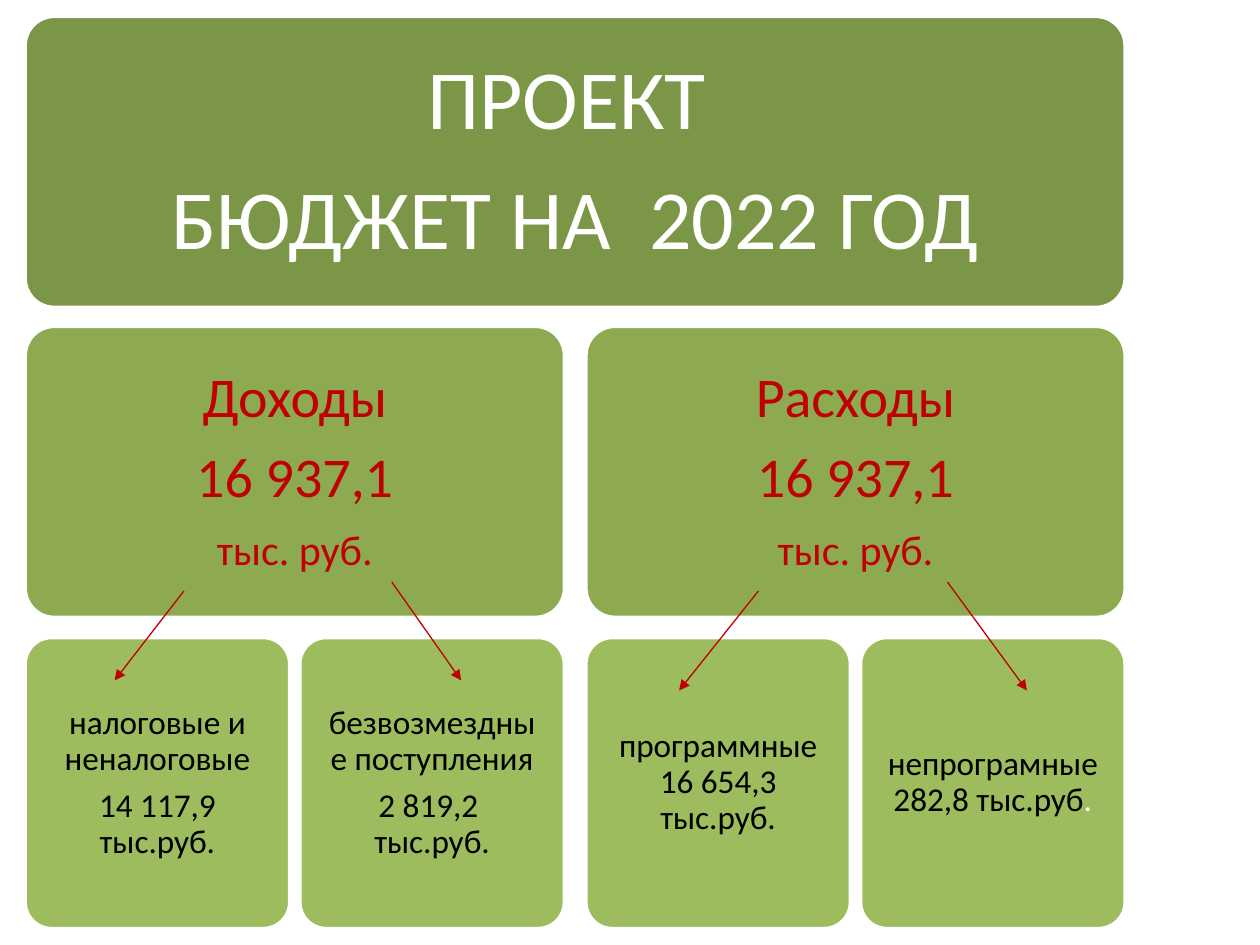
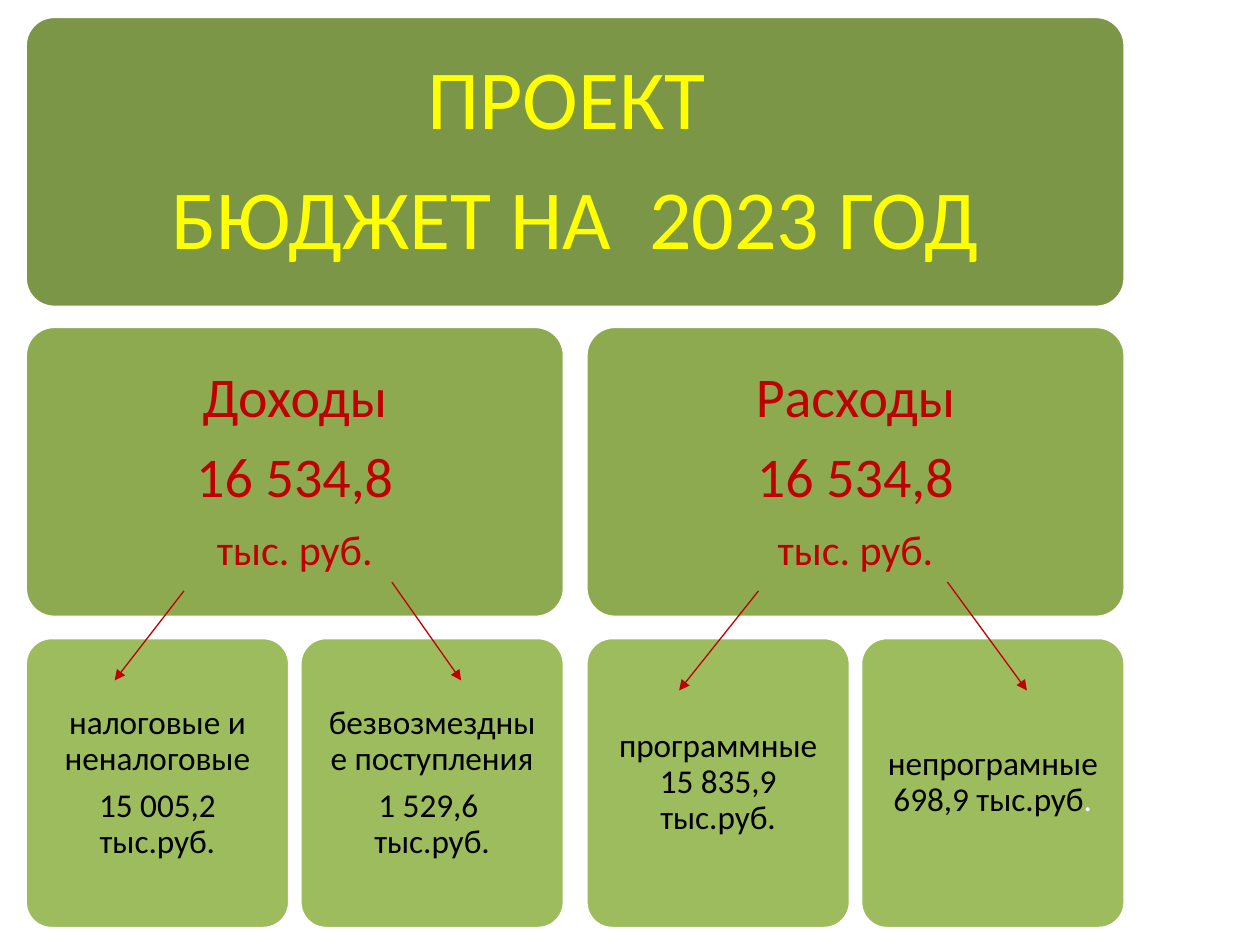
from lxml import etree
from pptx import Presentation
from pptx.dml.color import RGBColor
from pptx.enum.shapes import MSO_CONNECTOR, MSO_SHAPE
from pptx.enum.text import MSO_ANCHOR, MSO_AUTO_SIZE, PP_ALIGN
from pptx.oxml.ns import qn
from pptx.util import Inches, Pt

ROUNDED = MSO_SHAPE.ROUNDED_RECTANGLE
STRAIGHT = MSO_CONNECTOR.STRAIGHT
MIDDLE = MSO_ANCHOR.MIDDLE
NO_AUTOFIT = MSO_AUTO_SIZE.NONE
CENTER = PP_ALIGN.CENTER
TITLE_ONLY = 5

THEME = {
    "font": "Calibri",
    "white": RGBColor(0xFF, 0xFF, 0xFF),
    "yellow": RGBColor(0xFF, 0xFF, 0x00),
    "black": RGBColor(0x00, 0x00, 0x00),
    "red": RGBColor(0xC0, 0x00, 0x00),
    "band": RGBColor(0x7C, 0x96, 0x47),
    "branch": RGBColor(0x8D, 0xAA, 0x51),
    "leaf": RGBColor(0x9C, 0xBC, 0x5D),
    "title_size": 48,
    "branch_size": 32,
    "unit_size": 24,
    "leaf_size": 19,
}

LEFT, BAND_WIDTH, ROW_HEIGHT = 0.2, 8.73, 2.31
BAND_TOP, BRANCH_TOP, LEAF_TOP = 0.13, 2.59, 5.06
BRANCH_WIDTH, BRANCH_STEP = 4.28, 4.45
LEAF_WIDTH, LEAF_STEP = 2.1, 2.18
TITLE_INSET, BRANCH_INSET, LEAF_INSET = 0.2, 0.2, 0.14

ARROWS = [
    (1.46, 4.69, 0.91, 5.4),
    (3.11, 4.62, 3.66, 5.4),
    (6.02, 4.69, 5.39, 5.48),
    (7.52, 4.62, 8.15, 5.48),
]

BUDGETS = [
    {"year": 2022, "title_color": "white", "total": "16 937,1", "tax": "14 117,9",
     "grants": "2 819,2", "program": "16 654,3", "other": "282,8"},
    {"year": 2023, "title_color": "yellow", "total": "16 534,8", "tax": "15 005,2",
     "grants": "1 529,6", "program": "15 835,9", "other": "698,9"},
]


def add_panel(slide, left, top, width, level):
    panel = slide.shapes.add_shape(
        ROUNDED, Inches(left), Inches(top), Inches(width), Inches(ROW_HEIGHT))
    panel.adjustments[0] = 0.1
    panel.shadow.inherit = False
    panel.fill.solid()
    panel.fill.fore_color.rgb = THEME[level]
    panel.line.color.rgb = THEME["white"]
    panel.line.width = Pt(2)
    return panel


def write_text(shape, inset, paragraphs):
    """Fill a shape with paragraphs, each a size and its (text, colour) runs."""
    frame = shape.text_frame
    frame_format = {"word_wrap": True, "auto_size": NO_AUTOFIT, "vertical_anchor": MIDDLE}
    for side in ("left", "right", "top", "bottom"):
        frame_format[f"margin_{side}"] = Inches(inset)
    for name, value in frame_format.items():
        setattr(frame, name, value)
    for index, (size, runs) in enumerate(paragraphs):
        paragraph = frame.add_paragraph() if index else frame.paragraphs[0]
        paragraph_format = {"alignment": CENTER, "line_spacing": 0.9,
                            "space_before": Pt(0), "space_after": Pt(0.35 * size)}
        for name, value in paragraph_format.items():
            setattr(paragraph, name, value)
        for text, color in runs:
            run = paragraph.add_run()
            run.text = text
            run.font.name = THEME["font"]
            run.font.size = Pt(size)
            run.font.color.rgb = THEME[color]


prs = Presentation()
prs.slide_width, prs.slide_height = Inches(10), Inches(7.5)

for budget in BUDGETS:
    slide = prs.slides.add_slide(prs.slide_layouts[TITLE_ONLY])

    # Title on its band
    band = add_panel(slide, LEFT, BAND_TOP, BAND_WIDTH, "band")
    title = slide.shapes.title
    title.element.addprevious(band.element)
    title_box = {"left": 0.27, "top": 0.2, "width": 8.6, "height": 2.17}
    for name, value in title_box.items():
        setattr(title, name, Inches(value))
    title_lines = ["ПРОЕКТ ", f"БЮДЖЕТ НА  {budget['year']} ГОД"]
    write_text(title, TITLE_INSET, [
        (THEME["title_size"], [(line, budget["title_color"])]) for line in title_lines])

    # Income and spending, each with its two parts
    leaf_size = THEME["leaf_size"]
    income_parts = [
        [(leaf_size, [("налоговые и неналоговые", "black")]),
         (leaf_size, [(f"{budget['tax']} тыс.руб.", "black")])],
        [(leaf_size, [("безвозмездные поступления", "black")]),
         (leaf_size, [(f"{budget['grants']}  тыс.руб.", "black")])],
    ]
    spending_parts = [
        [(leaf_size, [(f"программные {budget['program']} тыс.руб.", "black")])],
        [(leaf_size, [(f"непрограмные {budget['other']} тыс.руб", "black"),
                      (".", "white")])],
    ]
    branches = [("Доходы", income_parts), ("Расходы", spending_parts)]
    for column, (heading, parts) in enumerate(branches):
        branch_left = LEFT + column * BRANCH_STEP
        branch = add_panel(slide, branch_left, BRANCH_TOP, BRANCH_WIDTH, "branch")
        write_text(branch, BRANCH_INSET, [
            (THEME["branch_size"], [(heading, "red")]),
            (THEME["branch_size"], [(budget["total"], "red")]),
            (THEME["unit_size"], [("тыс. руб.", "red")]),
        ])
        for position, part in enumerate(parts):
            leaf = add_panel(slide, branch_left + position * LEAF_STEP, LEAF_TOP,
                             LEAF_WIDTH, "leaf")
            write_text(leaf, LEAF_INSET, part)

    # Arrows from the totals to their parts
    for ends in ARROWS:
        arrow = slide.shapes.add_connector(STRAIGHT, *map(Inches, ends))
        arrow.line.color.rgb = THEME["red"]
        arrow.line.width = Pt(0.75)
        etree.SubElement(arrow.line._get_or_add_ln(), qn("a:tailEnd"), type="triangle")
        etree.SubElement(arrow.element.spPr, qn("a:effectLst"))

prs.save("out.pptx")
